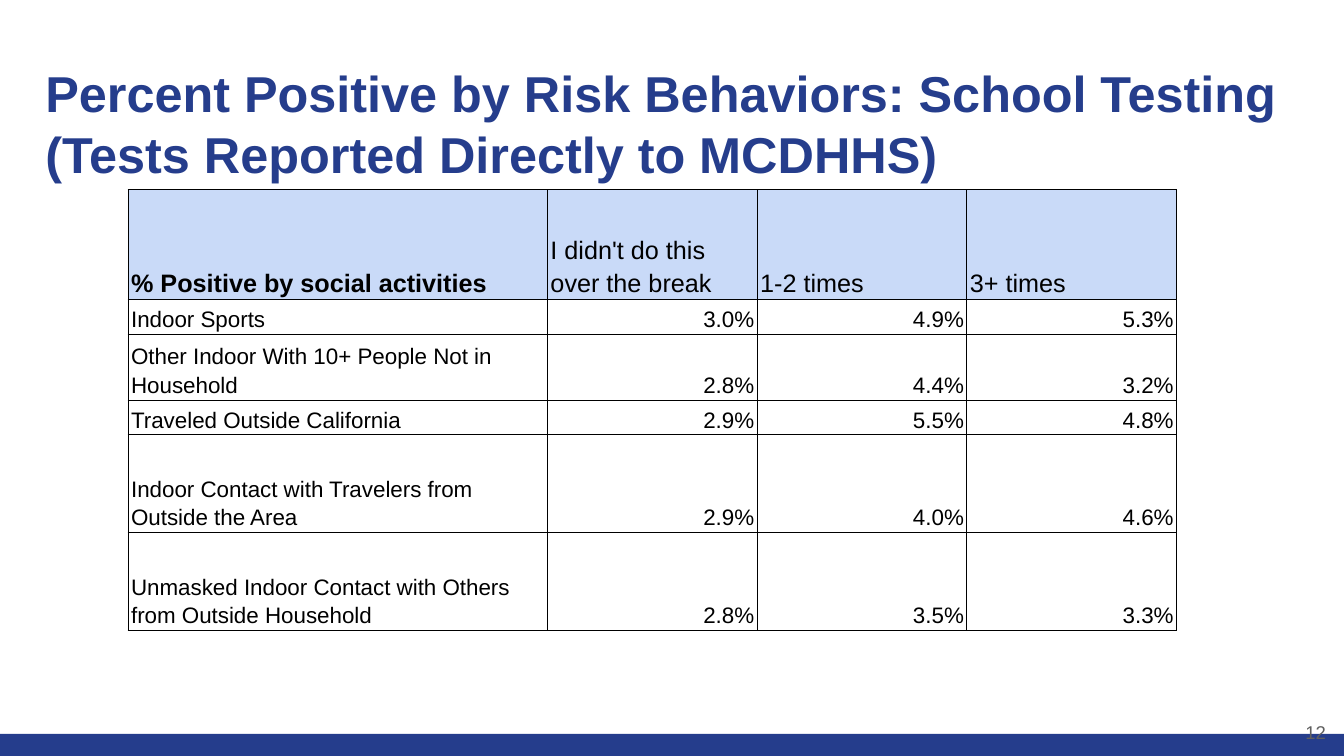
"""Build the school testing slide with its risk behavior table."""
from lxml import etree
from pptx import Presentation, util as u
from pptx.dml.color import RGBColor
from pptx.enum import shapes, text
from pptx.oxml import ns

NAVY, BLACK = "253D8C", "000000"


def rgb(value):
    return RGBColor.from_string(value)


def write(tf, words, size, color=BLACK, bold=False, align="LEFT", spacing=1.0):
    tf.word_wrap = True
    p = tf.paragraphs[0]
    p.alignment = text.PP_ALIGN[align]
    p.line_spacing = spacing
    r = p.add_run()
    r.text = words
    r.font.name, r.font.size, r.font.bold = "Arial", u.Pt(size), bold
    r.font.color.rgb = rgb(color)


prs = Presentation()
prs.slide_width, prs.slide_height = u.Inches(13.33), u.Inches(7.5)
s = prs.slides.add_slide(prs.slide_layouts[6])

bar = s.shapes.add_shape(shapes.MSO_SHAPE.RECTANGLE, 0, u.Inches(7.28), prs.slide_width, u.Inches(0.22))
bar.shadow.inherit = False
bar.fill.solid()
bar.fill.fore_color.rgb = rgb(NAVY)
bar.line.fill.background()

title = "Percent Positive by Risk Behaviors: School Testing (Tests Reported Directly to MCDHHS)"
boxes = [
    ((0.45, 0.62, 12.42, 0.83), "TOP", title, dict(size=36, color=NAVY, bold=True)),
    ((12.35, 6.8, 0.8, 0.57), "BOTTOM", "12", dict(size=13.2, color="5F5F5F", align="RIGHT")),
]
for place, anchor, words, style in boxes:
    tf = s.shapes.add_textbox(*map(u.Inches, place)).text_frame
    tf.margin_left = tf.margin_right = tf.margin_top = tf.margin_bottom = 0
    tf.vertical_anchor = text.MSO_ANCHOR[anchor]
    write(tf, words, **style)

rows = [
    ("% Positive by social activities", "I didn't do this over the break", "1-2 times", "3+ times"),
    ("Indoor Sports", "3.0%", "4.9%", "5.3%"),
    ("Other Indoor With 10+ People Not in Household", "2.8%", "4.4%", "3.2%"),
    ("Traveled Outside California", "2.9%", "5.5%", "4.8%"),
    ("Indoor Contact with Travelers from Outside the Area", "2.9%", "4.0%", "4.6%"),
    ("Unmasked Indoor Contact with Others from Outside Household", "2.8%", "3.5%", "3.3%"),
]
widths = [4.16, 2.08, 2.08, 2.08]
heights = [1.09, 0.33, 0.65, 0.33, 0.97, 0.97]
table = s.shapes.add_table(len(rows), len(widths), u.Inches(1.27), u.Inches(1.88),
                           u.Inches(sum(widths)), u.Inches(sum(heights))).table
for column, width in zip(table.columns, widths):
    column.width = u.Inches(width)
for row, height in zip(table.rows, heights):
    row.height = u.Inches(height)

for i, row in enumerate(rows):
    for j, words in enumerate(row):
        cell = table.cell(i, j)
        cell.margin_left = cell.margin_right = u.Inches(0.03)
        cell.margin_top = cell.margin_bottom = u.Inches(0.02)
        cell.vertical_anchor = text.MSO_ANCHOR.BOTTOM
        write(cell.text_frame, words, 16 if i else 18, bold=i == j == 0,
              align="RIGHT" if i and j else "LEFT", spacing=1.15)
        tcPr = cell._tc.get_or_add_tcPr()
        for side in ("lnL", "lnR", "lnT", "lnB"):
            ln = etree.SubElement(tcPr, ns.qn(f"a:{side}"), w=str(u.Pt(0.75)))
            fill = etree.SubElement(ln, ns.qn("a:solidFill"))
            etree.SubElement(fill, ns.qn("a:srgbClr"), val=BLACK)
        cell.fill.solid()
        cell.fill.fore_color.rgb = rgb("FFFFFF" if i else "C9DAF8")

prs.save("out.pptx")
